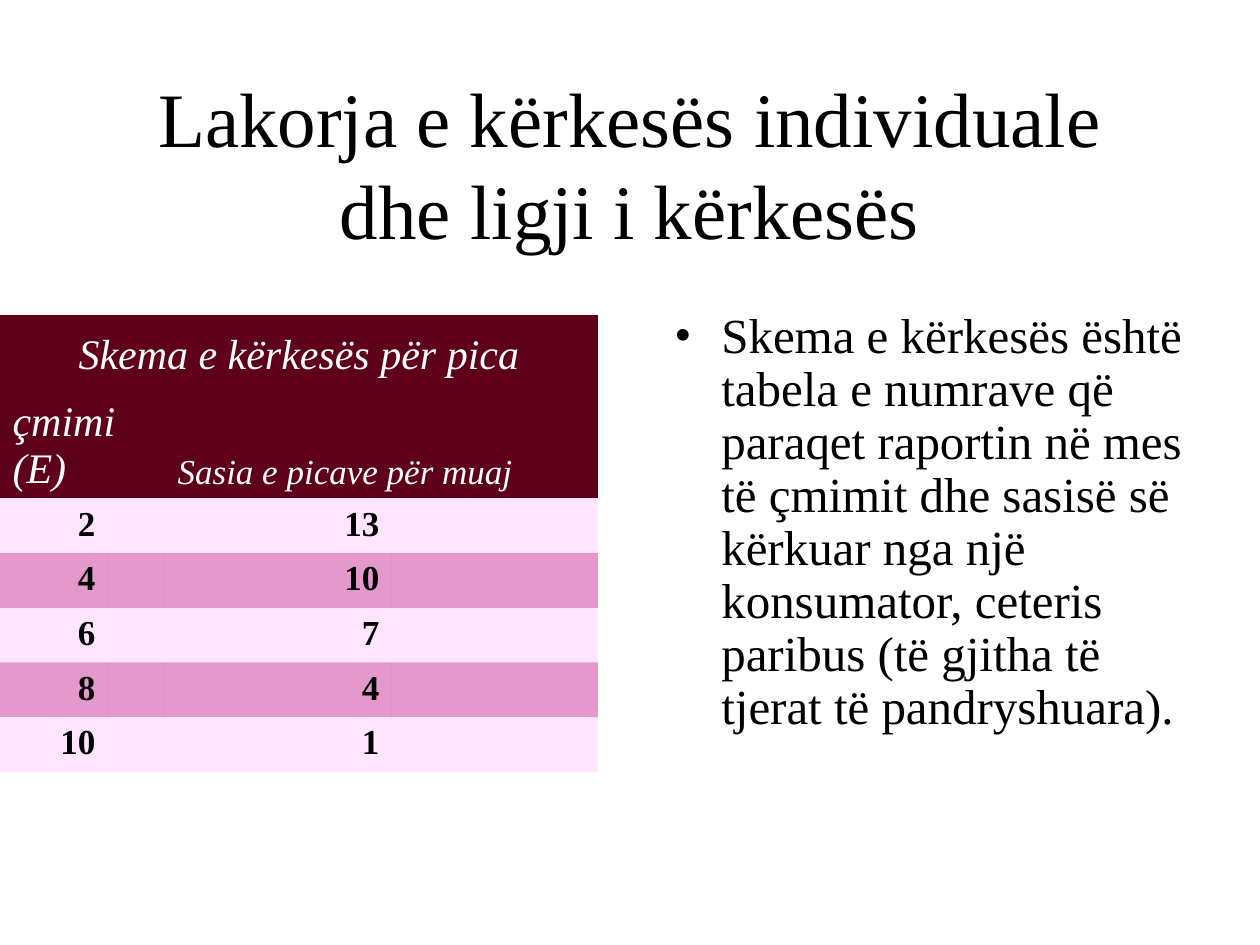
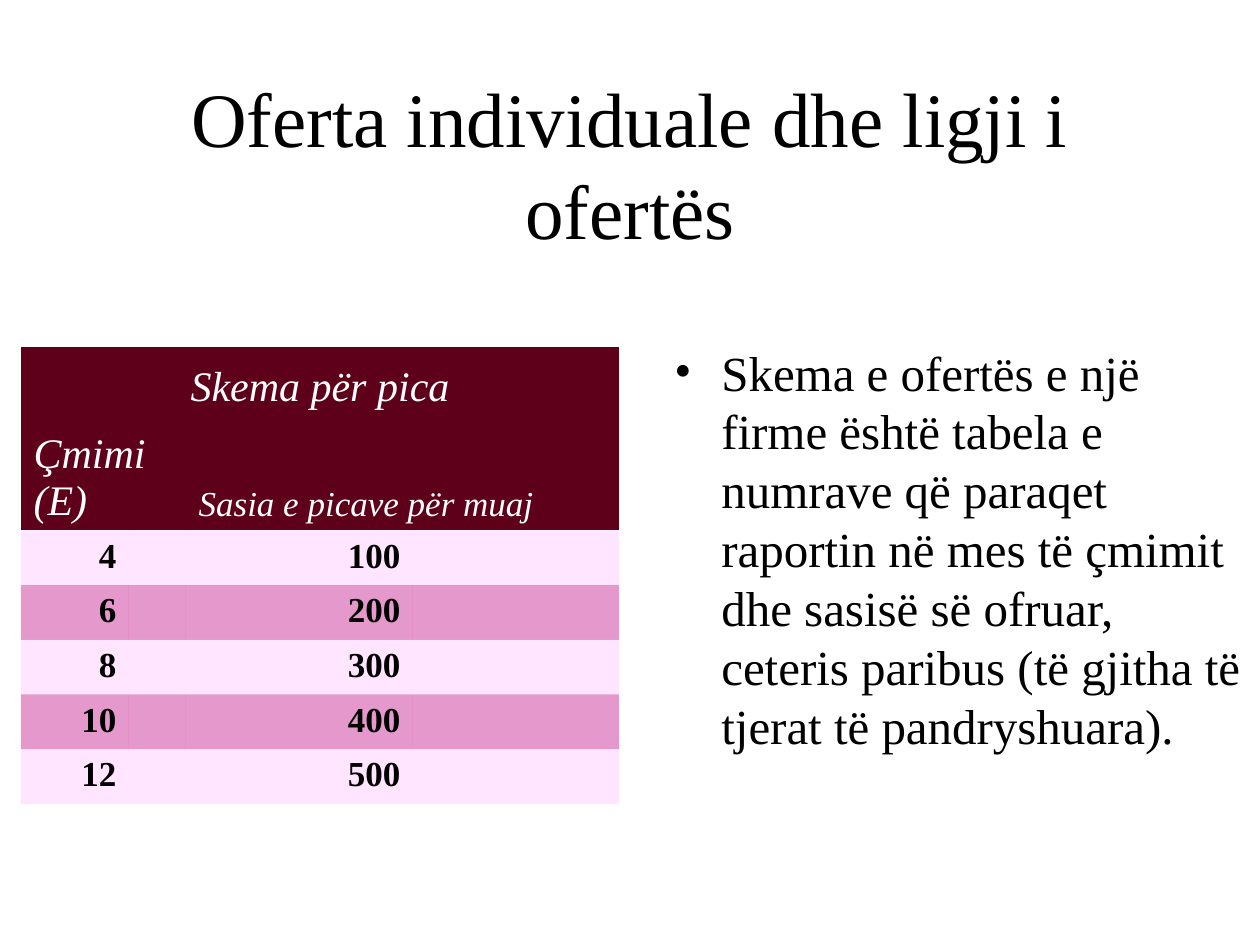
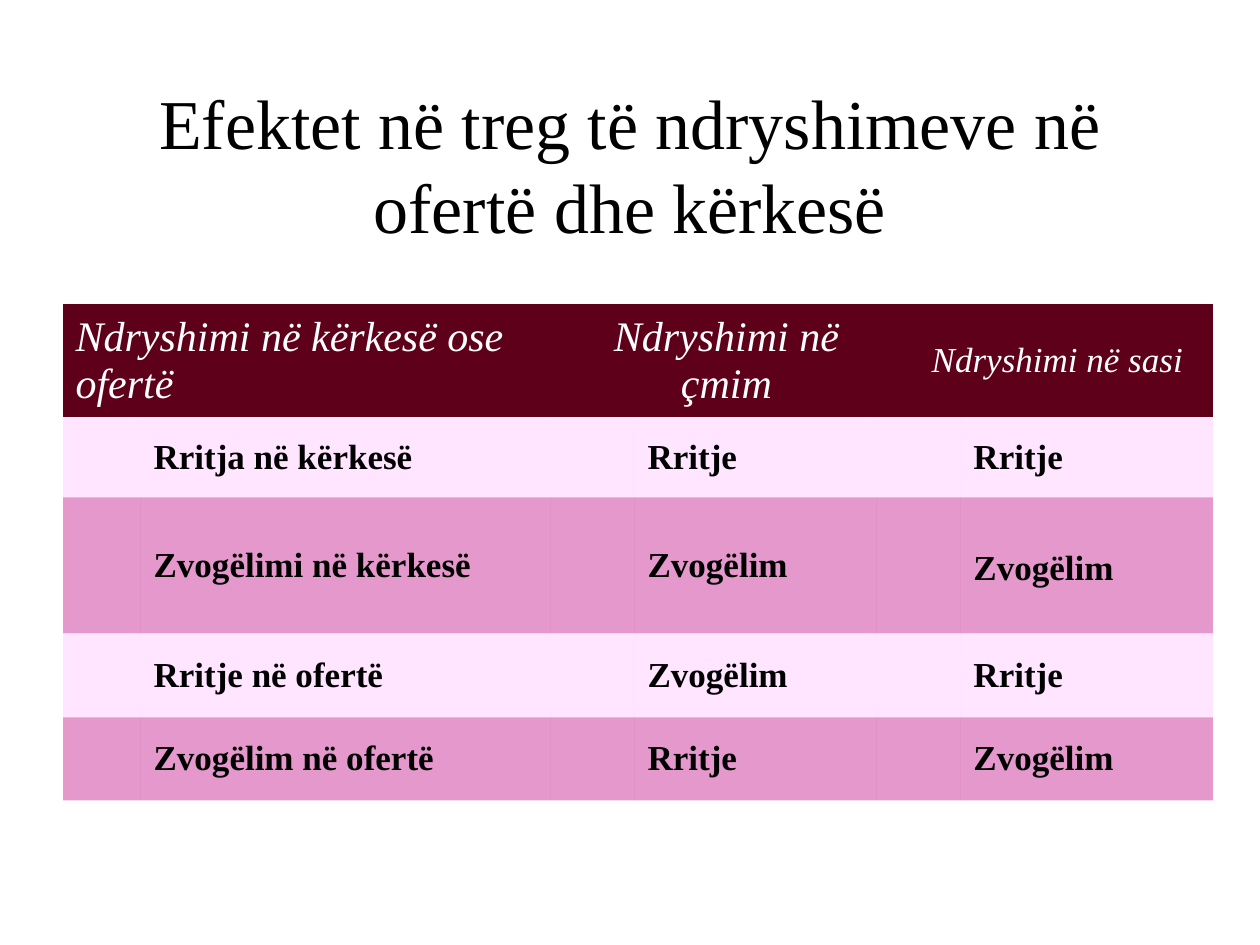
from lxml.etree import SubElement
from pptx import Presentation
from pptx.dml.color import RGBColor
from pptx.enum.text import MSO_ANCHOR as Anchor, PP_ALIGN as Align
from pptx.oxml.ns import qn
from pptx.util import Emu, Pt

EMU_PER_PX = 914400 / 126
FONT = "Times New Roman"
COLORS = {
    "text": "000000",
    "header": "5F001B",
    "header_text": "FFFFFF",
    "light_band": "FFCCFF",
    "dark_band": "CC3399",
}
PLAIN_TABLE = "{2D5ABB26-0587-4C30-8999-92F81FD0307C}"
TITLE_AREA = (94, 84, 1072, 158)
BULLET_INDENT = 47
SCHEMA_COLUMNS = (108, 57, 227, 206)
SCHEMA_ROWS = (70, 106, 52, 51, 52, 51, 52)
EFFECT_COLUMNS = (78, 410, 84, 242, 25, 59, 252)
EFFECT_ROWS = (106, 80, 136, 84, 83)


def px(length):
    return Emu(round(length * EMU_PER_PX))


def add_span(para, text, size, color="text", bold=False, italic=False):
    span = para.add_run()
    span.text = text
    font = span.font
    font.name, font.size, font.bold, font.italic = FONT, Pt(size), bold, italic
    font.color.rgb = RGBColor.from_string(COLORS[color])


def add_box(page, area):
    box = page.shapes.add_textbox(*map(px, area))
    box.text_frame.word_wrap = True
    return box.text_frame


def add_title(page, text, size=44):
    frame = add_box(page, TITLE_AREA)
    frame.vertical_anchor = Anchor.MIDDLE
    para = frame.paragraphs[0]
    para.alignment = Align.CENTER
    add_span(para, text, size)


def add_bullet(page, area, text, spacing=None):
    para = add_box(page, area).paragraphs[0]
    para.line_spacing = spacing
    props = para._p.get_or_add_pPr()
    props.set("marL", str(px(BULLET_INDENT)))
    props.set("indent", str(-px(BULLET_INDENT)))
    SubElement(props, qn("a:buFont"), typeface=FONT)
    SubElement(props, qn("a:buChar"), char="•")
    add_span(para, text, 28)


def fill_cell(cell, color, opacity=100):
    cell.fill.solid()
    cell.fill.fore_color.rgb = RGBColor.from_string(COLORS[color])
    if opacity < 100:
        tint = cell._tc.tcPr.find(".//" + qn("a:srgbClr"))
        SubElement(tint, qn("a:alpha"), val=str(opacity * 1000))


def write_cell(cell, text, align, anchor, **style):
    cell.vertical_anchor = anchor
    para = cell.text_frame.paragraphs[0]
    para.alignment = align
    add_span(para, text, **style)


def add_plain_table(page, left, top, columns, rows):
    frame = page.shapes.add_table(
        len(rows), len(columns), px(left), px(top), px(sum(columns)), px(sum(rows)))
    table = frame.table
    table.first_row = table.horz_banding = False
    table._tbl.tblPr.find(qn("a:tableStyleId")).text = PLAIN_TABLE
    for column, width in zip(table.columns, columns):
        column.width = px(width)
    for row, height in zip(table.rows, rows):
        row.height = px(height)
    return table


def add_header(table, row, first, last, text, size, align, anchor):
    for column in range(first, last + 1):
        fill_cell(table.cell(row, column), "header")
    cell = table.cell(row, first)
    cell.merge(table.cell(row, last))
    write_cell(cell, text, align, anchor, size=size, color="header_text", italic=True)


def add_data(table, first_row, text_columns, records, align, anchor):
    """Band the data rows and write each record into the text columns."""
    for index, record in enumerate(records):
        row = first_row + index
        band = "dark_band" if index % 2 else "light_band"
        for cell in table.rows[row].cells:
            fill_cell(cell, band, 50)
        for column, text in zip(text_columns, record):
            write_cell(table.cell(row, column), str(text), align, anchor, size=20, bold=True)


def add_schema(page, left, top, heading, price_label, records):
    table = add_plain_table(page, left, top, SCHEMA_COLUMNS, SCHEMA_ROWS)
    add_header(table, 0, 0, 3, heading, 24, Align.CENTER, Anchor.BOTTOM)
    add_header(table, 1, 0, 1, price_label, 24, Align.LEFT, Anchor.BOTTOM)
    add_header(table, 1, 2, 3, "Sasia e picave për muaj", 20, Align.LEFT, Anchor.BOTTOM)
    add_data(table, 2, (0, 2), records, Align.RIGHT, Anchor.TOP)


def add_effects(page, left, top, records):
    table = add_plain_table(page, left, top, EFFECT_COLUMNS, EFFECT_ROWS)
    for first, last, text, size, align in (
        (0, 1, "Ndryshimi në kërkesë ose ofertë", 24, Align.LEFT),
        (2, 4, "Ndryshimi në çmim", 24, Align.CENTER),
        (5, 6, "Ndryshimi në sasi", 20, Align.CENTER),
    ):
        add_header(table, 0, first, last, text, size, align, Anchor.MIDDLE)
    add_data(table, 1, (1, 3, 6), records, Align.LEFT, Anchor.MIDDLE)
    for row in range(1, len(EFFECT_ROWS)):
        table.cell(row, 4).merge(table.cell(row, 5))
    table.cell(2, 6).margin_top = px(12)


def main():
    deck = Presentation()
    deck.slide_width, deck.slide_height = px(1260), px(945)
    blank = deck.slide_layouts[6]
    demand, supply, effects = (deck.slides.add_slide(blank) for _ in range(3))

    add_title(demand, "Lakorja e kërkesës individuale dhe ligji i kërkesës")
    add_schema(demand, 0, 315, "Skema e kërkesës për pica", "çmimi (E)",
               [(2, 13), (4, 10), (6, 7), (8, 4), (10, 1)])
    add_bullet(demand, (662, 305, 546, 457),
               "Skema e kërkesës është tabela e numrave që paraqet raportin në mes "
               "të çmimit dhe sasisë së kërkuar nga një konsumator, ceteris paribus "
               "(të gjitha të tjerat të pandryshuara).", 0.9)

    add_title(supply, "Oferta individuale dhe ligji i ofertës")
    add_schema(supply, 21, 347, "Skema për pica", "Çmimi (E)",
               [(4, 100), (6, 200), (8, 300), (10, 400), (12, 500)])
    add_bullet(supply, (662, 336, 598, 577),
               "Skema e ofertës e një firme është tabela e numrave që paraqet "
               "raportin në mes të çmimit dhe sasisë së ofruar, ceteris paribus "
               "(të gjitha të tjerat të pandryshuara).")

    add_title(effects, "Efektet në treg të ndryshimeve në ofertë dhe kërkesë", 40)
    add_effects(effects, 63, 304, [
        ("Rritja në kërkesë", "Rritje", "Rritje"),
        ("Zvogëlimi në kërkesë", "Zvogëlim", "Zvogëlim"),
        ("Rritje në ofertë", "Zvogëlim", "Rritje"),
        ("Zvogëlim në ofertë", "Rritje", "Zvogëlim"),
    ])

    deck.save("out.pptx")


if __name__ == "__main__":
    main()
